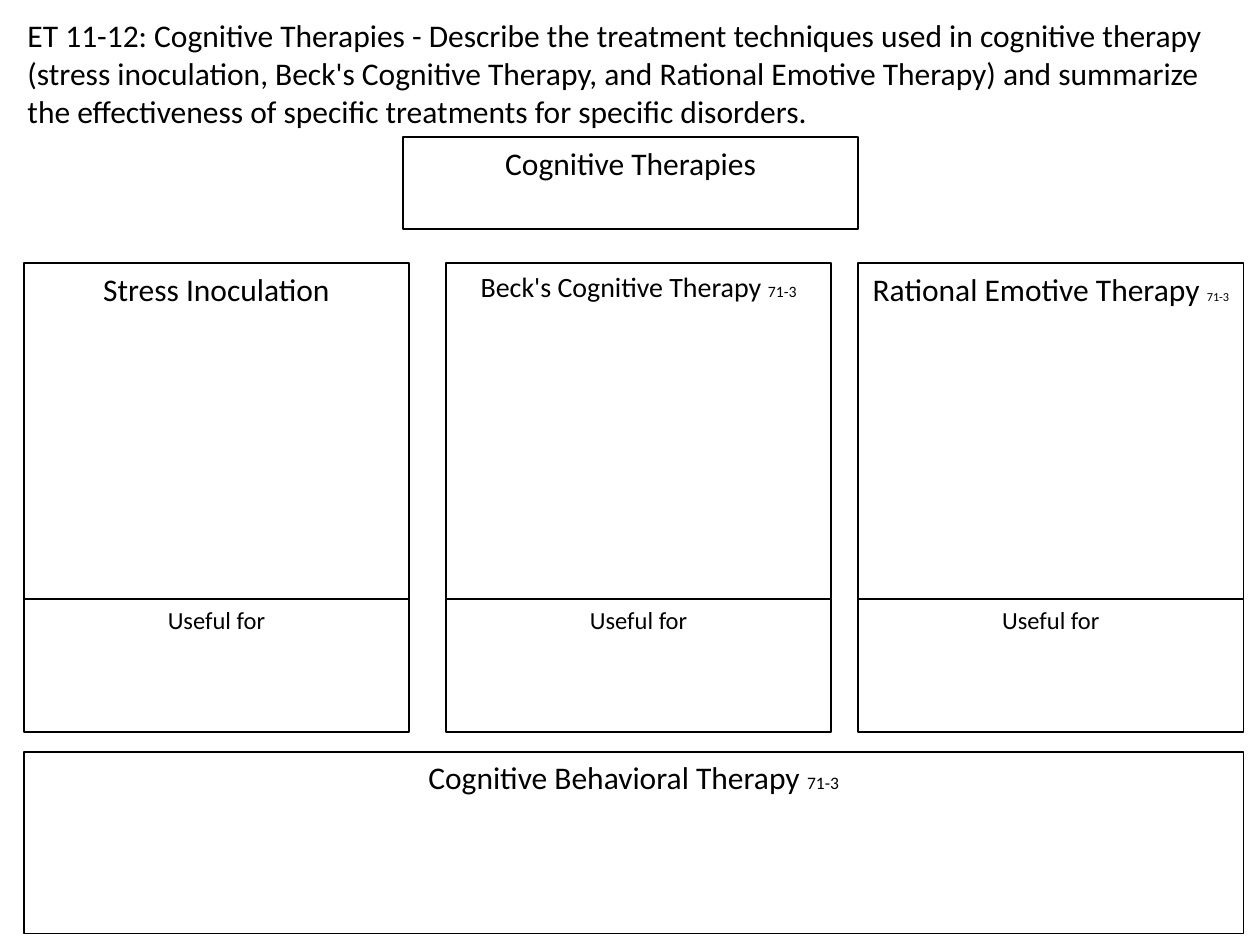
from pptx import Presentation
from pptx import util as u
from pptx.dml.color import RGBColor
from pptx.enum import shapes, text

FONT = "Calibri"
INK, PAPER = "000000", "FFFFFF"

# Heading, heading size, page reference, reference size, left edge (cm)
THERAPIES = [
    ("Stress Inoculation", 18, None, None, 0.48),
    ("Beck's Cognitive Therapy ", 16, "71-3", 9, 8.99),
    ("Rational Emotive Therapy ", 18, "71-3", 7, 17.3),
]


def colour(value):
    return RGBColor.from_string(value)


def add_run(paragraph, words, size):
    run = paragraph.add_run()
    run.text = words
    run.font.name = FONT
    run.font.size = u.Pt(size)
    run.font.color.rgb = colour(INK)


def add_box(slide, left, top, width, height, runs):
    """Outlined box with a centred heading at its top; all lengths in cm."""
    box = slide.shapes.add_shape(
        shapes.MSO_SHAPE.RECTANGLE,
        u.Cm(left), u.Cm(top), u.Cm(width), u.Cm(height))
    box.shadow.inherit = False
    box.fill.solid()
    box.fill.fore_color.rgb = colour(PAPER)
    box.line.color.rgb = colour(INK)
    box.line.width = u.Pt(1)
    frame = box.text_frame
    frame.word_wrap = True
    frame.vertical_anchor = text.MSO_ANCHOR.TOP
    heading = frame.paragraphs[0]
    heading.alignment = text.PP_ALIGN.CENTER
    for words, size in runs:
        add_run(heading, words, size)


def add_objective(slide, left, top, width, height):
    title = slide.shapes.title
    title.left, title.top = u.Cm(left), u.Cm(top)
    title.width, title.height = u.Cm(width), u.Cm(height)
    frame = title.text_frame
    frame.word_wrap = True
    frame.auto_size = text.MSO_AUTO_SIZE.NONE
    frame.vertical_anchor = text.MSO_ANCHOR.TOP
    objective = frame.paragraphs[0]
    objective.alignment = text.PP_ALIGN.LEFT
    add_run(objective,
            "ET 11-12: Cognitive Therapies - Describe the treatment techniques "
            "used in cognitive therapy (stress inoculation, Beck's Cognitive "
            "Therapy, and Rational Emotive Therapy) and summarize the "
            "effectiveness of specific treatments for specific disorders.", 18)


def add_therapy(slide, left, top, width, height, runs):
    """Therapy column: notes area above a "Useful for" area."""
    uses_height = 2.69
    notes_height = height - uses_height
    add_box(slide, left, top, width, notes_height, runs)
    add_box(slide, left, top + notes_height, width, uses_height,
            [("Useful for", 14)])


def main():
    prs = Presentation()
    prs.slide_width, prs.slide_height = u.Cm(25.4), u.Cm(19.05)
    slide = prs.slides.add_slide(prs.slide_layouts[5])

    # Learning objective and topic
    add_objective(slide, 0.3, 0.2, 25.1, 2.57)
    add_box(slide, 8.13, 2.77, 9.17, 1.85, [("Cognitive Therapies", 18)])

    # Three therapy columns
    for name, size, pages, pages_size, left in THERAPIES:
        runs = [(name, size)]
        if pages:
            runs.append((pages, pages_size))
        add_therapy(slide, left, 5.31, 7.77, 9.45, runs)

    # Combined approach along the bottom
    add_box(slide, 0.48, 15.16, 24.59, 3.66,
            [("Cognitive Behavioral Therapy ", 18), ("71-3", 10)])

    prs.save("out.pptx")


if __name__ == "__main__":
    main()
